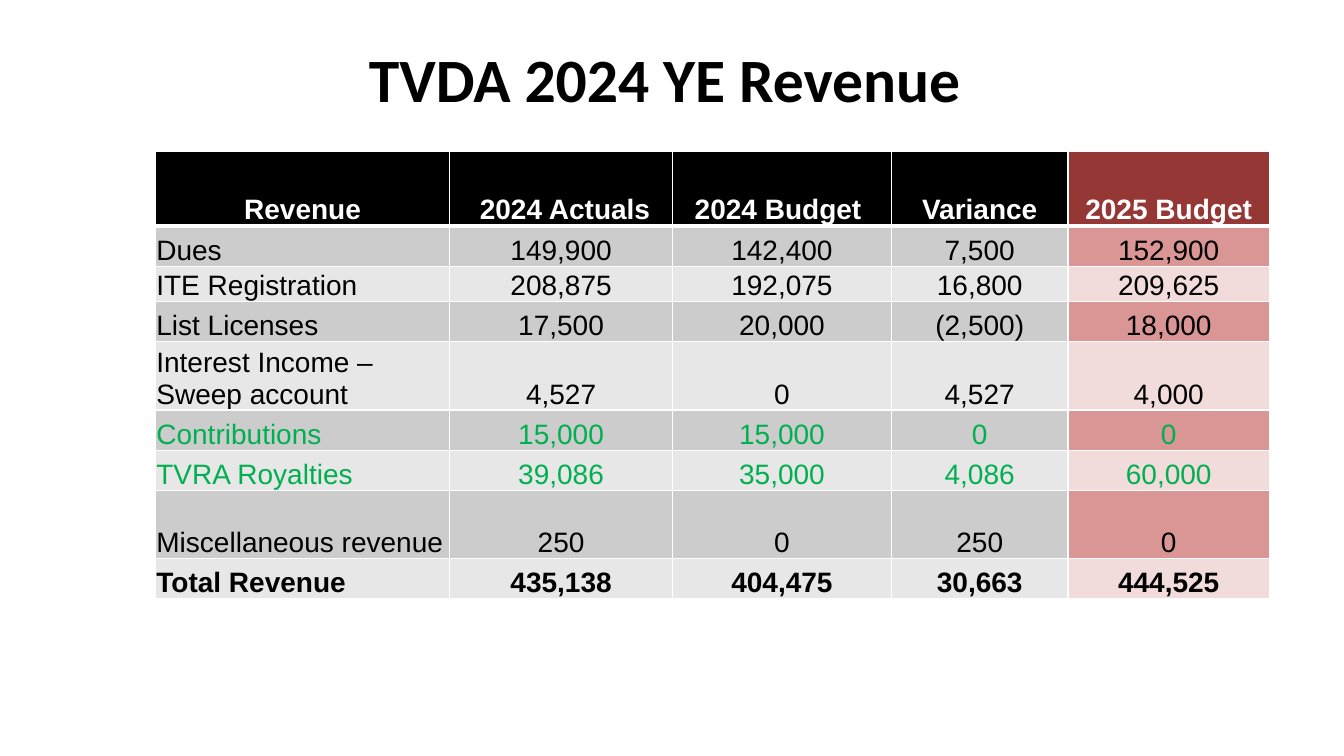
"""Build the year-end revenue slide with its budget table."""
from dataclasses import dataclass

from lxml import etree
from pptx import Presentation
from pptx.dml.color import RGBColor
from pptx.enum.text import MSO_ANCHOR, PP_ALIGN
from pptx.oxml.ns import qn
from pptx.slide import Slide
from pptx.table import Table, _Cell
from pptx.text.text import TextFrame
from pptx.util import Pt

LEFT, CENTER = PP_ALIGN.LEFT, PP_ALIGN.CENTER
MIDDLE, BOTTOM = MSO_ANCHOR.MIDDLE, MSO_ANCHOR.BOTTOM


@dataclass(frozen=True)
class Theme:
    title_font: str = "Calibri"
    table_font: str = "Arial"
    title_size: float = 44
    table_size: float = 20
    black: str = "000000"
    white: str = "FFFFFF"
    green: str = "00B050"
    header_accent: str = "953735"
    bands: tuple[str, str] = ("CCCCCC", "E7E7E7")
    accent_bands: tuple[str, str] = ("D99694", "F2DCDB")
    thin: float = 1
    thick: float = 3


@dataclass(frozen=True)
class RevenueRow:
    values: tuple[str, ...]
    height: float = 28.8
    color: str = Theme.black
    bold: bool = False


THEME = Theme()
COLUMN_WIDTHS = (210.3, 159.1, 156.5, 126, 144)
HEADER = RevenueRow(
    ("Revenue", " 2024 Actuals", "2024 Budget ", "Variance", "2025 Budget"),
    height=53.3, color=THEME.white, bold=True)
BODY = (
    RevenueRow(("Dues", "149,900", "142,400", "7,500", "152,900")),
    RevenueRow(("ITE Registration", "208,875", "192,075", "16,800", "209,625"), height=25.2),
    RevenueRow(("List Licenses", "17,500", "20,000", "(2,500)", "18,000")),
    RevenueRow(("Interest Income – Sweep account", "4,527", "0", "4,527", "4,000"), height=48.3),
    RevenueRow(("Contributions", "15,000", "15,000", "0", "0"), color=THEME.green),
    RevenueRow(("TVRA Royalties", "39,086", "35,000", "4,086", "60,000"), color=THEME.green),
    RevenueRow(("Miscellaneous revenue", "250", "0", "250", "0"), height=48.3),
    RevenueRow(("Total Revenue", "435,138", "404,475", "30,663", "444,525"), bold=True),
)
ROWS = (HEADER, *BODY)


def write_text(frame: TextFrame, text: str, *, font: str, size: float, color: str,
               bold: bool = False, align: PP_ALIGN = CENTER) -> None:
    """Write one formatted paragraph into a text frame."""
    frame.word_wrap = True
    para = frame.paragraphs[0]
    para.alignment = align
    span = para.add_run()
    span.text = text
    span.font.name = font
    span.font.size = Pt(size)
    span.font.bold = bold
    span.font.color.rgb = RGBColor.from_string(color)


def set_borders(cell: _Cell, top: float, bottom: float) -> None:
    """Draw white borders around a cell."""
    properties = cell._tc.get_or_add_tcPr()
    widths = {"a:lnL": THEME.thin, "a:lnR": THEME.thin, "a:lnT": top, "a:lnB": bottom}
    for position, (tag, width) in enumerate(widths.items()):
        line = etree.Element(qn(tag), w=str(Pt(width)))
        fill = etree.SubElement(line, qn("a:solidFill"))
        etree.SubElement(fill, qn("a:srgbClr"), val=THEME.white)
        properties.insert(position, line)


def cell_fill(row_index: int, accented: bool) -> str:
    """Return the fill colour for a row and column kind."""
    if row_index == 0:
        return THEME.header_accent if accented else THEME.black
    bands = THEME.accent_bands if accented else THEME.bands
    return bands[(row_index - 1) % 2]


def fill_row(table: Table, row_index: int, row: RevenueRow) -> None:
    """Fill and format one table row."""
    table.rows[row_index].height = Pt(row.height)
    last = len(row.values) - 1
    for column_index, value in enumerate(row.values):
        cell = table.cell(row_index, column_index)
        cell.margin_left = cell.margin_right = cell.margin_top = Pt(0.7)
        cell.margin_bottom = Pt(0)
        cell.vertical_anchor = BOTTOM
        cell.fill.solid()
        cell.fill.fore_color.rgb = RGBColor.from_string(
            cell_fill(row_index, column_index == last))
        set_borders(cell,
                    top=THEME.thick if row_index == 1 else THEME.thin,
                    bottom=THEME.thick if row_index == 0 else THEME.thin)
        label = column_index == 0 and row_index > 0
        write_text(cell.text_frame, value, font=THEME.table_font, size=THEME.table_size,
                   color=row.color, bold=row.bold, align=LEFT if label else CENTER)


def add_title(page: Slide) -> None:
    """Add the slide heading."""
    box = page.shapes.add_textbox(Pt(156), Pt(21.6), Pt(648), Pt(68.4))
    box.text_frame.vertical_anchor = MIDDLE
    write_text(box.text_frame, "TVDA 2024 YE Revenue ", font=THEME.title_font,
               size=THEME.title_size, color=THEME.black, bold=True)


def add_revenue_table(page: Slide) -> None:
    """Add the revenue table."""
    table = page.shapes.add_table(
        len(ROWS), len(COLUMN_WIDTHS), Pt(111), Pt(108),
        Pt(sum(COLUMN_WIDTHS)), Pt(sum(row.height for row in ROWS))).table
    for column, width in zip(table.columns, COLUMN_WIDTHS):
        column.width = Pt(width)
    for row_index, row in enumerate(ROWS):
        fill_row(table, row_index, row)


def main() -> None:
    """Create and save the deck."""
    deck = Presentation()
    deck.slide_width, deck.slide_height = Pt(960), Pt(540)
    page = deck.slides.add_slide(deck.slide_layouts[6])
    add_title(page)
    add_revenue_table(page)
    deck.save("out.pptx")


if __name__ == "__main__":
    main()
